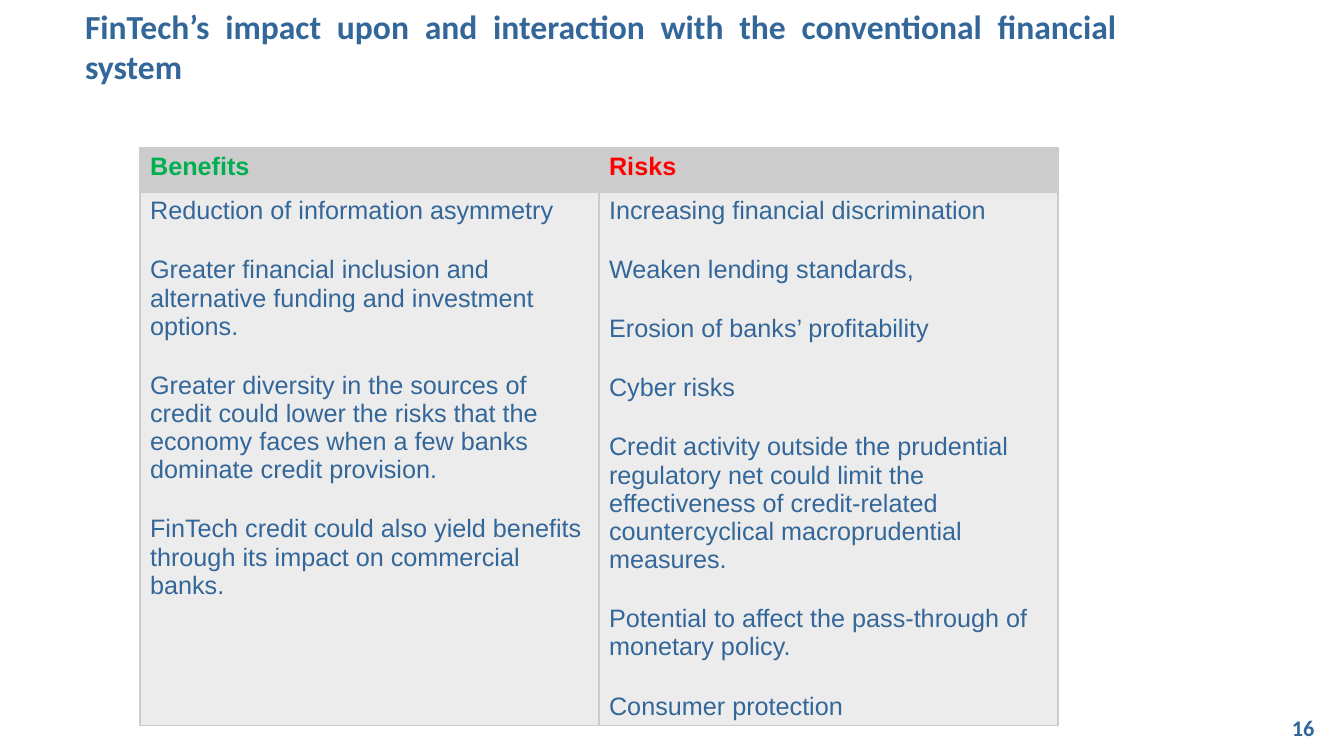
import pptx
import pptx.util
import pptx.dml.color
import pptx.enum.shapes
import pptx.enum.text
import pptx.oxml
import pptx.oxml.ns

THEME = dict(blue="336699", green="00B050", red="FF0000", head="CCCCCC",
             body="ECECEC", rule="CCCCCC", title=24, cell=18, page=16, gap=22)
PX = 914400 / 100.8
ALIGN = pptx.enum.text.PP_ALIGN
ANCHOR = pptx.enum.text.MSO_ANCHOR


def px(*sizes):
    return [round(size * PX) for size in sizes]


def write(frame, text, font="Arial", size=THEME["cell"], color=THEME["blue"],
          bold=False, align=ALIGN.LEFT, gap=0):
    for i, line in enumerate(text.split("\n")):
        para = frame.add_paragraph() if i else frame.paragraphs[0]
        para.alignment = align
        para.space_before = pptx.util.Pt(gap if i else 0)
        run = para.add_run()
        run.text = line
        run.font.name = font
        run.font.size = pptx.util.Pt(size)
        run.font.bold = bold
        run.font.color.rgb = pptx.dml.color.RGBColor.from_string(color)


deck = pptx.Presentation()
deck.slide_width, deck.slide_height = px(1344, 756)
slide = deck.slides.add_slide(deck.slide_layouts[5])

# Page number
page = slide.shapes.add_shape(
    pptx.enum.shapes.MSO_SHAPE.ROUNDED_RECTANGLE, *px(1266, 715, 50, 27))
page.shadow.inherit = False
page.fill.background()
page.line.fill.background()
frame = page.text_frame
frame.word_wrap = False
frame.vertical_anchor = ANCHOR.BOTTOM
frame.margin_left, frame.margin_top, frame.margin_right, frame.margin_bottom = px(0, 5, 0, 0)
write(frame, "16", font="Calibri", size=THEME["page"], bold=True, align=ALIGN.RIGHT)

# Title
title = slide.shapes.title
title.left, title.top, title.width, title.height = px(85, 0, 1040, 92)
frame = title.text_frame
frame.word_wrap = True
frame.auto_size = pptx.enum.text.MSO_AUTO_SIZE.NONE
frame.vertical_anchor = ANCHOR.MIDDLE
frame.margin_left, frame.margin_top, frame.margin_right, frame.margin_bottom = px(0, 0, 8, 0)
write(frame, "FinTech’s impact upon and interaction with the conventional financial system",
      font="Calibri", size=THEME["title"], bold=True, align=ALIGN.JUSTIFY)

# Benefits and risks
columns = [
    ("Benefits", THEME["green"], """Reduction of information asymmetry
Greater financial inclusion and alternative funding and investment options.
Greater diversity in the sources of credit could lower the risks that the economy faces when a few banks dominate credit provision.
FinTech credit could also yield benefits through its impact on commercial banks."""),
    ("Risks", THEME["red"], """Increasing financial discrimination
Weaken lending standards,
Erosion of banks’ profitability
Cyber risks
Credit activity outside the prudential regulatory net could limit the effectiveness of credit-related countercyclical macroprudential measures.
Potential to affect the pass-through of monetary policy.
Consumer protection"""),
]
table = slide.shapes.add_table(2, 2, *px(140, 148, 918, 576)).table
table.rows[0].height, table.rows[1].height = px(44, 532)
for col, (head, color, points) in enumerate(columns):
    table.columns[col].width = px(459)[0]
    write(table.cell(0, col).text_frame, head, color=color, bold=True)
    write(table.cell(1, col).text_frame, points, gap=THEME["gap"])

# Cell fills and borders
for row, fill in enumerate((THEME["head"], THEME["body"])):
    for cell in table.rows[row].cells:
        props = cell._tc.get_or_add_tcPr()
        for side in "LRTB":
            props.append(pptx.oxml.parse_xml(
                f'<a:ln{side} {pptx.oxml.ns.nsdecls("a")} w="12700"><a:solidFill>'
                f'<a:srgbClr val="{THEME["rule"]}"/></a:solidFill></a:ln{side}>'))
        cell.fill.solid()
        cell.fill.fore_color.rgb = pptx.dml.color.RGBColor.from_string(fill)

deck.save("out.pptx")
